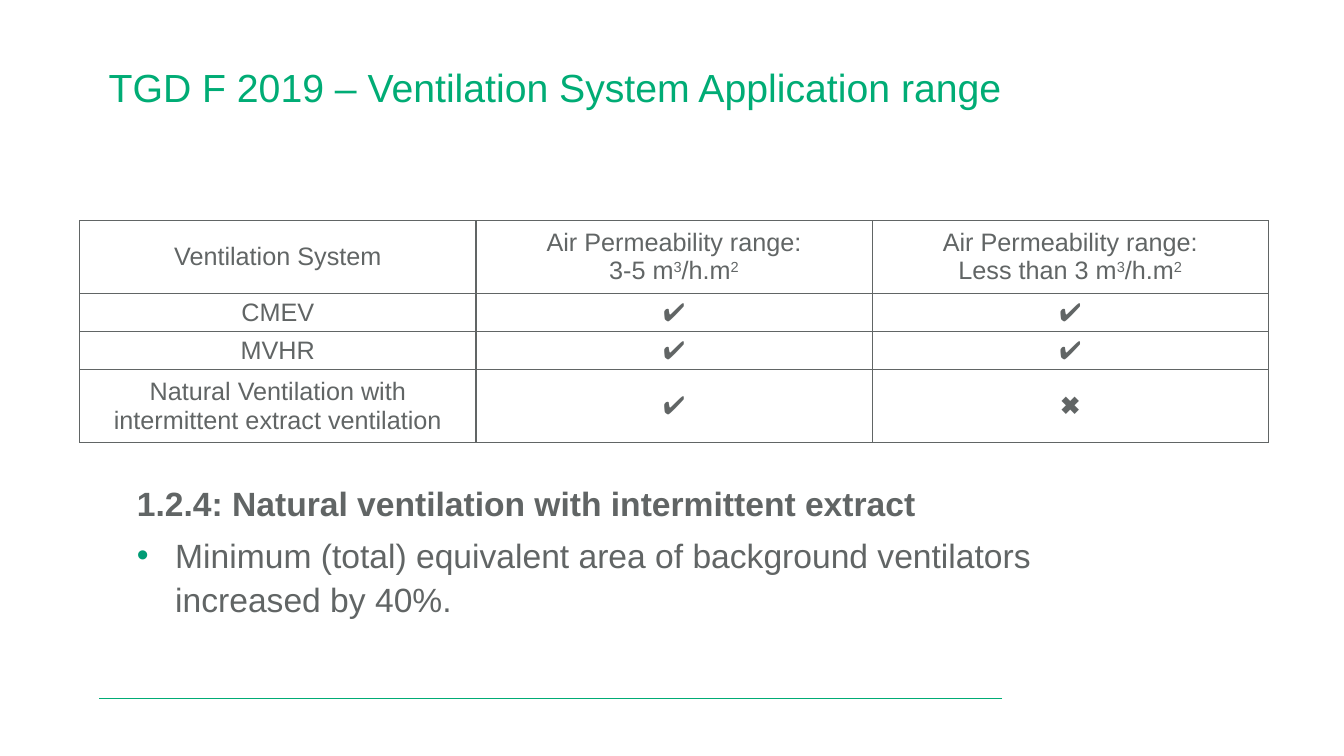
from lxml.etree import SubElement
from pptx import Presentation
from pptx.dml.color import RGBColor as RGB
from pptx.enum.shapes import MSO_CONNECTOR as Link
from pptx.enum.text import MSO_ANCHOR as Anchor, PP_ALIGN as Align
from pptx.oxml.ns import qn
from pptx.util import Inches, Pt

TITLE = "TGD F 2019 – Ventilation System Application range"

# A cell is a list of lines; in a line, every second part between bars is raised
YES, NO = ["✔"], ["✖"]
ROWS = [
    [["Ventilation System"],
     ["Air Permeability range:", "3-5 m|3|/h.m|2"],
     ["Air Permeability range:", "Less than 3 m|3|/h.m|2"]],
    [["CMEV"], YES, YES],
    [["MVHR"], YES, YES],
    [["Natural Ventilation with intermittent extract ventilation"], YES, NO],
]
HEAD = "1.2.4: Natural ventilation with intermittent extract"
POINT = "Minimum (total) equivalent area of background ventilators increased by 40%."

THEME = {
    "font": "Arial", "marks": "Roboto",
    "green": "00AC75", "grey": "616565", "bullet": "009C75",
    "title": 28, "body": 24, "cell": 18,
}

WIDE, HIGH = 13.33, 7.5
COL = 3.93
TALL, LOW = 0.72, 0.38
HEIGHTS = [TALL, LOW, LOW, TALL]
INDENT = 0.38


def style(run, size, color="grey", bold=False, face="font"):
    font = run.font
    font.name, font.size, font.bold = THEME[face], Pt(THEME[size]), bold
    font.color.rgb = RGB.from_string(THEME[color])


def add_box(slide, left, top, width, height):
    frame = slide.shapes.add_textbox(*map(Inches, (left, top, width, height))).text_frame
    frame.word_wrap = True
    return frame


def add_bullet(para):
    props = para._p.get_or_add_pPr()
    props.set("marL", str(Inches(INDENT)))
    props.set("indent", str(-Inches(INDENT)))
    tint = SubElement(props, qn("a:buClr"))
    SubElement(tint, qn("a:srgbClr"), val=THEME["bullet"])
    SubElement(props, qn("a:buFont"), typeface=THEME["font"])
    SubElement(props, qn("a:buChar"), char="•")


def add_edges(cell):
    props = cell._tc.get_or_add_tcPr()
    for side in "LRTB":
        edge = SubElement(props, qn(f"a:ln{side}"), w=str(Pt(1)))
        fill = SubElement(edge, qn("a:solidFill"))
        SubElement(fill, qn("a:srgbClr"), val=THEME["grey"])


def fill_cell(cell, lines):
    cell.margin_left = cell.margin_right = Inches(0.05)
    cell.margin_top = cell.margin_bottom = Inches(0.03)
    cell.vertical_anchor = Anchor.MIDDLE
    add_edges(cell)
    cell.fill.background()
    cell.text_frame.text = "\n".join(lines)
    face = "marks" if lines in (YES, NO) else "font"
    for para, line in zip(cell.text_frame.paragraphs, lines):
        para.alignment = Align.CENTER
        first, *rest = line.split("|")
        para.text = first
        for part in rest:
            para.add_run().text = part
        for i, run in enumerate(para.runs):
            style(run, "cell", face=face)
            if i % 2:
                run._r.get_or_add_rPr().set("baseline", "30000")


def add_grid(slide):
    cols = len(ROWS[0])
    spots = map(Inches, (0.79, 2.19, COL * cols, sum(HEIGHTS)))
    table = slide.shapes.add_table(len(ROWS), cols, *spots).table
    table.first_row = table.horz_banding = False
    for col in table.columns:
        col.width = Inches(COL)
    for row, height, texts in zip(table.rows, HEIGHTS, ROWS):
        row.height = Inches(height)
        for cell, lines in zip(row.cells, texts):
            fill_cell(cell, lines)


def add_notice(slide):
    frame = add_box(slide, 1.26, 4.7, 10.53, 1.5)
    frame.text = f"{HEAD}\n{POINT}"
    head, point = frame.paragraphs
    for para in (head, point):
        para.line_spacing = 1.1
        style(para.runs[0], "body", bold=para is head)
    point.space_before = Pt(5.5)
    add_bullet(point)


def add_rule(slide):
    ends = map(Inches, (9.94, 6.93, 0.98, 6.93))
    rule = slide.shapes.add_connector(Link.STRAIGHT, *ends)
    rule.line.color.rgb = RGB.from_string(THEME["green"])
    rule.line.width = Pt(0.5)
    SubElement(rule._element.spPr, qn("a:effectLst"))


def main():
    deck = Presentation()
    deck.slide_width, deck.slide_height = Inches(WIDE), Inches(HIGH)
    slide = deck.slides.add_slide(deck.slide_layouts[6])
    add_rule(slide)
    title = add_box(slide, 0.98, 0.53, 11.36, 0.77)
    title.margin_top = Inches(0.1)
    title.text = TITLE
    style(title.paragraphs[0].runs[0], "title", "green")
    add_notice(slide)
    add_grid(slide)
    deck.save("out.pptx")


if __name__ == "__main__":
    main()
